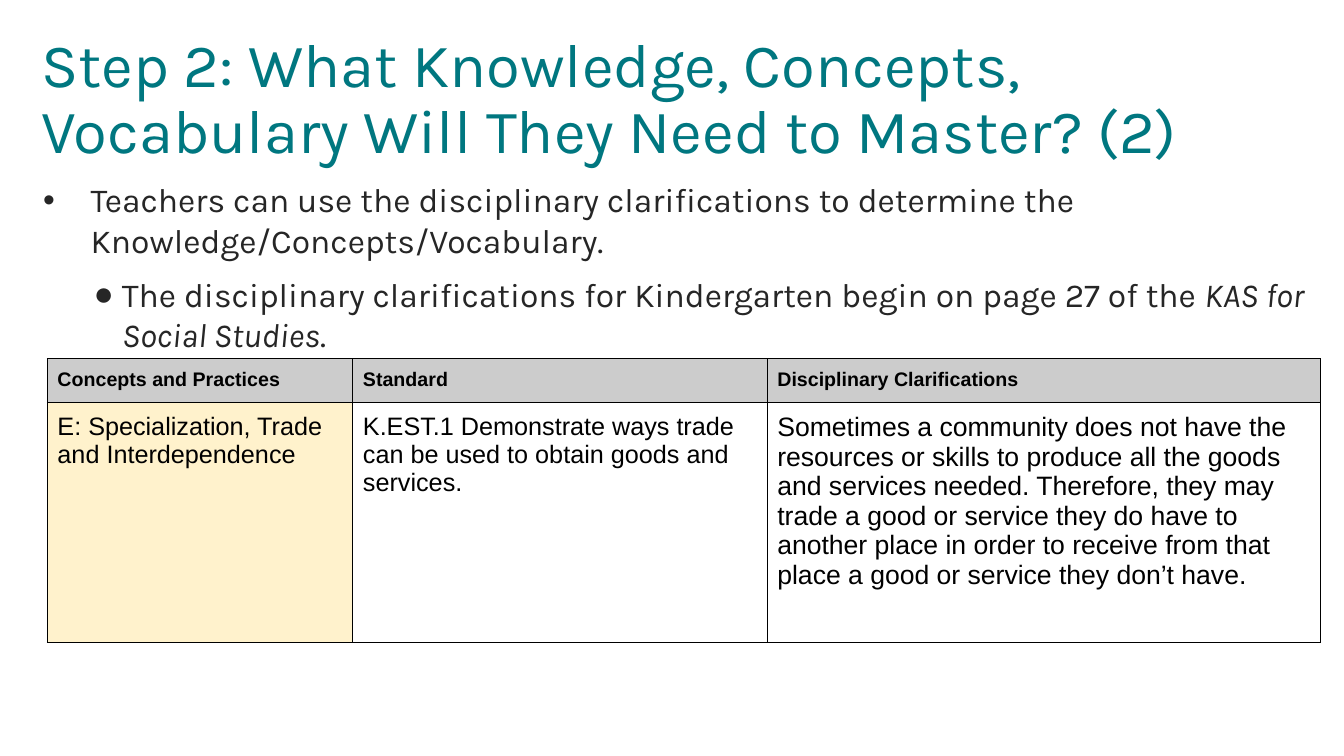
from dataclasses import dataclass

from lxml.etree import SubElement
from pptx import Presentation
from pptx.dml.color import RGBColor as Rgb
from pptx.enum.text import MSO_ANCHOR as Anchor
from pptx.oxml.ns import qn
from pptx.util import Inches, Pt

COLORS = {
    "teal": "007780",
    "ink": "262626",
    "black": "000000",
    "gray": "CCCCCC",
    "cream": "FFF2CC",
    "white": "FFFFFF",
}


@dataclass
class Cell:
    text: str
    fill: str
    size: float
    bold: bool = False


@dataclass
class Bullet:
    runs: list[tuple[str, bool]]
    mark: str
    left: float
    hang: float
    level: int = 0
    before: float = 0


HEADS = ["Concepts and Practices", "Standard", "Disciplinary Clarifications"]
ROWS = [
    [Cell(head, "gray", 14, True) for head in HEADS],
    [
        Cell("E: Specialization, Trade and Interdependence", "cream", 18),
        Cell("K.EST.1 Demonstrate ways trade can be used to obtain goods and services.",
             "white", 18),
        Cell("Sometimes a community does not have the resources or skills to produce "
             "all the goods and services needed. Therefore, they may trade a good or "
             "service they do have to another place in order to receive from that "
             "place a good or service they don’t have.", "white", 19),
    ],
]
WIDTHS = [3.03, 4.11, 5.49]
HEIGHTS = [0.42, 2.38]

BULLETS = [
    Bullet([("Teachers can use the disciplinary clarifications to determine the "
             "Knowledge/Concepts/Vocabulary.", False)], "•", 0.5, 0.47),
    Bullet([("The disciplinary clarifications for Kindergarten begin on page 27 of the ",
             False), ("KAS for Social Studies", True), (".", False)],
           "●", 0.81, 0.28, level=1, before=10),
]


def write(para, text: str, *, size: float, color: str, font: str = "Karla",
          bold: bool = False, italic: bool = False) -> None:
    run = para.add_run()
    run.text = text
    face = run.font
    face.name, face.size = font, Pt(size)
    face.bold, face.italic = bold, italic
    face.color.rgb = Rgb.from_string(COLORS[color])


def add_box(slide, left: float, top: float, width: float, height: float, anchor):
    box = slide.shapes.add_textbox(*map(Inches, (left, top, width, height)))
    frame = box.text_frame
    frame.word_wrap = True
    frame.vertical_anchor = anchor
    return frame


def add_bullet(para, item: Bullet) -> None:
    props = para._p.get_or_add_pPr()
    props.set("marL", str(Inches(item.left)))
    props.set("indent", str(-Inches(item.hang)))
    tint = SubElement(props, qn("a:buClr"))
    SubElement(tint, qn("a:srgbClr"), val=COLORS["ink"])
    SubElement(props, qn("a:buFont"), typeface="Arial")
    SubElement(props, qn("a:buChar"), char=item.mark)
    para.level = item.level
    if item.before:
        para.space_before = Pt(item.before)
    for text, italic in item.runs:
        write(para, text, size=24, color="ink", italic=italic)


def add_edges(cell) -> None:
    props = cell._tc.get_or_add_tcPr()
    for side in ("lnL", "lnR", "lnT", "lnB"):
        edge = SubElement(props, qn(f"a:{side}"), w=str(Pt(0.75)))
        fill = SubElement(edge, qn("a:solidFill"))
        SubElement(fill, qn("a:srgbClr"), val=COLORS["black"])


def fill_cell(cell, item: Cell) -> None:
    add_edges(cell)
    cell.fill.solid()
    cell.fill.fore_color.rgb = Rgb.from_string(COLORS[item.fill])
    cell.margin_left = cell.margin_right = Inches(0.1)
    cell.margin_top = cell.margin_bottom = Inches(0.1)
    write(cell.text_frame.paragraphs[0], item.text, size=item.size,
          color="black", font="Arial", bold=item.bold)


def add_grid(slide, left: float, top: float) -> None:
    size = map(Inches, (left, top, sum(WIDTHS), sum(HEIGHTS)))
    table = slide.shapes.add_table(len(ROWS), len(WIDTHS), *size).table
    table.horz_banding = False
    for col, width in zip(table.columns, WIDTHS):
        col.width = Inches(width)
    for row, height, items in zip(table.rows, HEIGHTS, ROWS):
        row.height = Inches(height)
        for cell, item in zip(row.cells, items):
            fill_cell(cell, item)


def main() -> None:
    deck = Presentation()
    deck.slide_width, deck.slide_height = Inches(13.33), Inches(7.5)
    slide = deck.slides.add_slide(deck.slide_layouts[6])

    # Title
    title = add_box(slide, 0.31, 0.28, 12.73, 1.44, Anchor.MIDDLE).paragraphs[0]
    title.line_spacing = 0.9
    write(title, "Step 2: What Knowledge, Concepts, Vocabulary Will They Need "
          "to Master? (2)", size=44, color="teal")

    # Bullets
    body = add_box(slide, 0.3, 1.73, 13.03, 5.36, Anchor.TOP)
    for i, item in enumerate(BULLETS):
        add_bullet(body.add_paragraph() if i else body.paragraphs[0], item)

    # Standards table
    add_grid(slide, 0.47, 3.56)

    deck.save("out.pptx")


if __name__ == "__main__":
    main()
